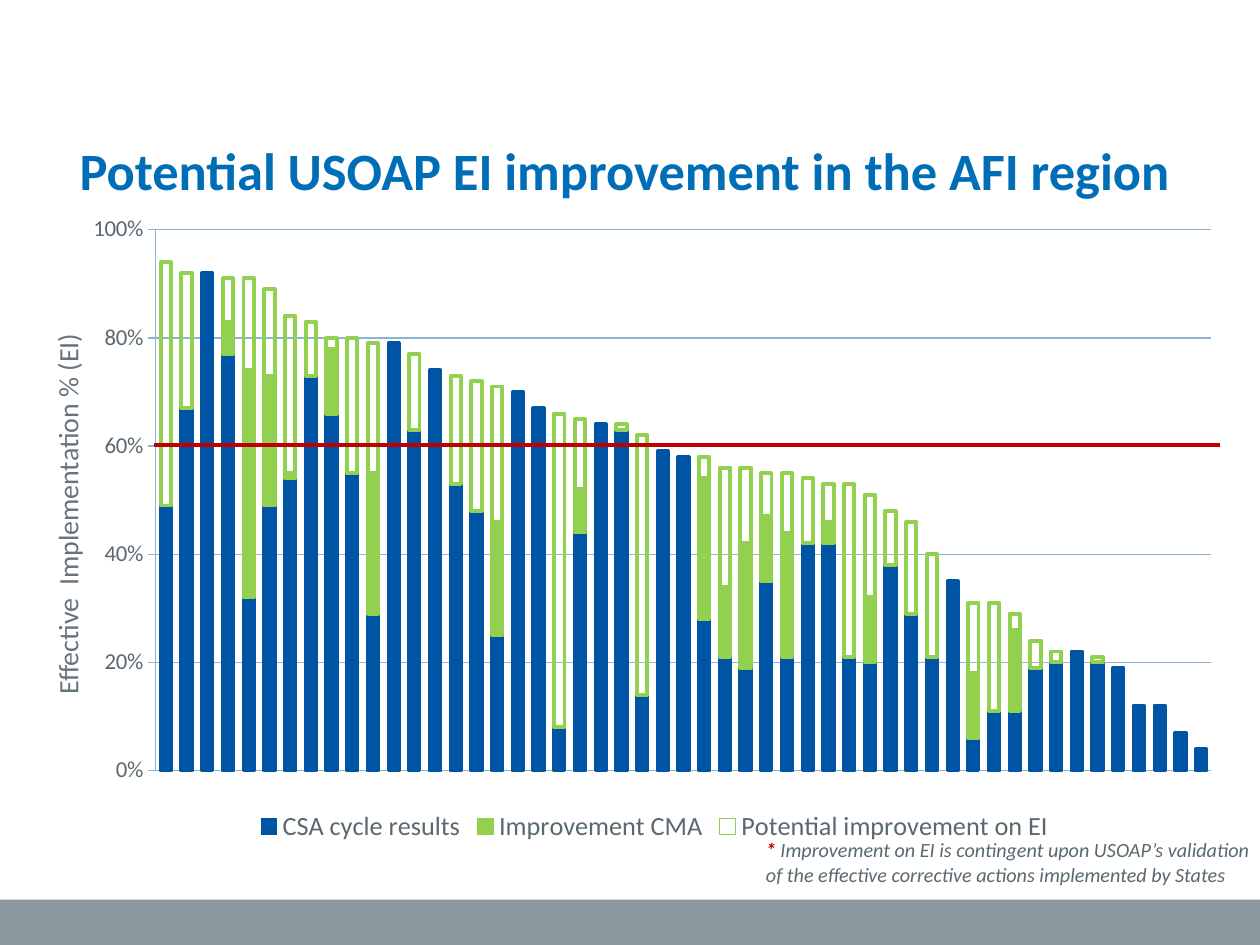
import pptx
import pptx.chart.data
import pptx.dml.color
import pptx.enum.chart
import pptx.enum.shapes
import pptx.enum.text
import pptx.oxml
import pptx.oxml.ns
import pptx.util

Pt = pptx.util.Pt
RGBColor = pptx.dml.color.RGBColor
PP_ALIGN = pptx.enum.text.PP_ALIGN
ANCHOR = pptx.enum.text.MSO_ANCHOR

BLUE = RGBColor(0x00, 0x54, 0xA4)
TITLE_BLUE = RGBColor(0x00, 0x6E, 0xB7)
GREEN = RGBColor(0x92, 0xD0, 0x50)
RED = RGBColor(0xC0, 0x00, 0x00)
TEXT_GREY = RGBColor(0x5A, 0x68, 0x70)
AXIS_GREY = RGBColor(0x66, 0x74, 0x7C)
STRIP_GREY = RGBColor(0x8C, 0x99, 0xA1)
GRID_BLUE = RGBColor(0x8D, 0xB4, 0xD6)
FONT = "Calibri"

STATES = 51
CSA_RESULTS = [
    0.49, 0.67, 0.92, 0.77, 0.32, 0.49, 0.54, 0.73, 0.66, 0.55, 0.29, 0.79, 0.63,
    0.74, 0.53, 0.48, 0.25, 0.7, 0.67, 0.08, 0.44, 0.64, 0.63, 0.14, 0.59, 0.58,
    0.28, 0.21, 0.19, 0.35, 0.21, 0.42, 0.42, 0.21, 0.2, 0.38, 0.29, 0.21, 0.35,
    0.06, 0.11, 0.11, 0.19, 0.2, 0.22, 0.2, 0.19, 0.12, 0.12, 0.07, 0.04]
# Only some states have an improvement: state number -> value
CMA_BY_STATE = {
    4: 0.06, 5: 0.42, 6: 0.24, 7: 0.01, 9: 0.12, 11: 0.26, 17: 0.21, 21: 0.08,
    27: 0.26, 28: 0.13, 29: 0.23, 30: 0.12, 31: 0.23, 33: 0.04, 35: 0.12, 36: 0,
    40: 0.12, 42: 0.15}
POTENTIAL = [
    0.45, 0.25, 0, 0.08, 0.17, 0.16, 0.29, 0.1, 0.02, 0.25, 0.24, 0, 0.14,
    0, 0.2, 0.24, 0.25, 0, 0, 0.58, 0.13, 0, 0.01, 0.48, 0, 0,
    0.04, 0.22, 0.14, 0.08, 0.11, 0.12, 0.07, 0.32, 0.19, 0.1, 0.17, 0.19, 0,
    0.13, 0.2, 0.03, 0.05, 0.02, 0, 0.01, 0, 0, 0, 0, 0]


def set_format(target, values):
    for name, value in values.items():
        setattr(target, name, value)


def set_font(font, color, **values):
    set_format(font, {"name": FONT, **values})
    font.color.rgb = color


def set_line(line, color, width):
    line.color.rgb = color
    line.width = Pt(width)


def place(part, box):
    names = ("left", "top", "width", "height")
    set_format(part, {name: Pt(value) for name, value in zip(names, box)})


def add_strip(slide, box):
    strip = slide.shapes.add_shape(
        pptx.enum.shapes.MSO_SHAPE.RECTANGLE, *map(Pt, box))
    strip.shadow.inherit = False
    strip.fill.solid()
    strip.fill.fore_color.rgb = STRIP_GREY
    strip.line.fill.background()


def add_title(slide, box):
    title = slide.shapes.title
    place(title, box)
    title.text_frame.text = "Potential USOAP EI improvement in the AFI region"
    title.text_frame.vertical_anchor = ANCHOR.MIDDLE
    paragraph = title.text_frame.paragraphs[0]
    paragraph.alignment = PP_ALIGN.CENTER
    set_font(paragraph.runs[0].font, TITLE_BLUE, size=Pt(30), bold=True)


def add_axis_caption(slide, box):
    caption = slide.shapes.add_textbox(*map(Pt, box))
    caption.rotation = 180
    frame = caption.text_frame
    frame.word_wrap = True
    # Vertical text, turned to read upwards
    frame._txBody.bodyPr.set("vert", "eaVert")
    run = frame.paragraphs[0].add_run()
    run.text = "Effective  Implementation % (EI)"
    set_font(run.font, AXIS_GREY, size=Pt(16))


def add_footnote(slide, box):
    frame = slide.shapes.add_textbox(*map(Pt, box)).text_frame
    frame.word_wrap = True
    note = (" Improvement on EI is contingent upon USOAP’s validation of the "
            "effective corrective actions implemented by States")
    for text, color, bold in (("*", RED, True), (note, TEXT_GREY, False)):
        run = frame.paragraphs[0].add_run()
        run.text = text
        set_font(run.font, color, size=Pt(11.5), bold=bold, italic=True)


def fix_plot_area(chart, **fractions):
    qn = pptx.oxml.ns.qn
    plot_area = chart._chartSpace.find(".//" + qn("c:plotArea"))
    for automatic in plot_area.findall(qn("c:layout")):
        plot_area.remove(automatic)
    layout = pptx.oxml.parse_xml(
        "<c:layout %s><c:manualLayout><c:layoutTarget val='inner'/>"
        "<c:xMode val='edge'/><c:yMode val='edge'/></c:manualLayout></c:layout>"
        % pptx.oxml.ns.nsdecls("c"))
    for name, value in fractions.items():
        item = layout.makeelement(qn("c:" + name))
        item.set("val", str(value))
        layout[0].append(item)
    plot_area.insert(0, layout)


def add_ei_chart(slide, box):
    data = pptx.chart.data.CategoryChartData(number_format="0%")
    data.categories = [str(state) for state in range(1, STATES + 1)]
    data.add_series("CSA cycle results", CSA_RESULTS)
    data.add_series("Improvement CMA",
                    [CMA_BY_STATE.get(state) for state in range(1, STATES + 1)])
    data.add_series("Potential improvement on EI", POTENTIAL)
    chart = slide.shapes.add_chart(
        pptx.enum.chart.XL_CHART_TYPE.COLUMN_STACKED, *map(Pt, box), data).chart
    set_font(chart.font, TEXT_GREY, size=Pt(10))
    set_format(chart, {"has_title": False, "has_legend": True})
    fix_plot_area(chart, x=0.07, y=0.04, w=0.91, h=0.84)

    # Stacked columns: the potential part is only outlined
    plot = chart.plots[0]
    set_format(plot, {"gap_width": 100, "overlap": 100, "vary_by_categories": False})
    for series, fill, outline in zip(
            plot.series, (BLUE, GREEN, None), (BLUE, GREEN, GREEN)):
        if fill is None:
            series.format.fill.background()
        else:
            series.format.fill.solid()
            series.format.fill.fore_color.rgb = fill
        set_line(series.format.line, outline, 2.25)
        series.invert_if_negative = False

    # Axes
    chart.category_axis.visible = False
    axis = chart.value_axis
    tick_mark = pptx.enum.chart.XL_TICK_MARK
    set_format(axis, {
        "minimum_scale": 0, "maximum_scale": 1, "major_unit": 0.2,
        "has_major_gridlines": True, "major_tick_mark": tick_mark.OUTSIDE,
        "minor_tick_mark": tick_mark.NONE})
    set_format(axis.tick_labels, {
        "number_format": "0%", "number_format_is_linked": False})
    set_font(axis.tick_labels.font, TEXT_GREY, size=Pt(13))
    for line in (axis.format.line, axis.major_gridlines.format.line):
        set_line(line, GRID_BLUE, 0.75)

    # Legend
    set_format(chart.legend, {
        "position": pptx.enum.chart.XL_LEGEND_POSITION.BOTTOM,
        "include_in_layout": False})
    set_font(chart.legend.font, TEXT_GREY, size=Pt(15))


def add_target_line(slide, left, right, y):
    target = slide.shapes.add_connector(
        pptx.enum.shapes.MSO_CONNECTOR.STRAIGHT, Pt(left), Pt(y), Pt(right), Pt(y))
    set_line(target.line, RED, 2.25)
    properties = target._element.spPr
    properties.append(properties.makeelement(pptx.oxml.ns.qn("a:effectLst")))


def main():
    deck = pptx.Presentation()
    set_format(deck, {"slide_width": Pt(720), "slide_height": Pt(540)})
    slide = deck.slides.add_slide(deck.slide_layouts.get_by_name("Title Only"))
    add_strip(slide, (0, 514, 720, 26))
    add_title(slide, (-8.6, 71.3, 731.5, 51.1))
    add_axis_caption(slide, (25.2, 145.4, 33.8, 258.5))
    add_footnote(slide, (430.6, 475.2, 297.4, 49.7))
    add_ei_chart(slide, (42.5, 116.6, 663.1, 367.9))
    add_target_line(slide, 87.8, 697, 254.2)
    deck.save("out.pptx")


if __name__ == "__main__":
    main()
